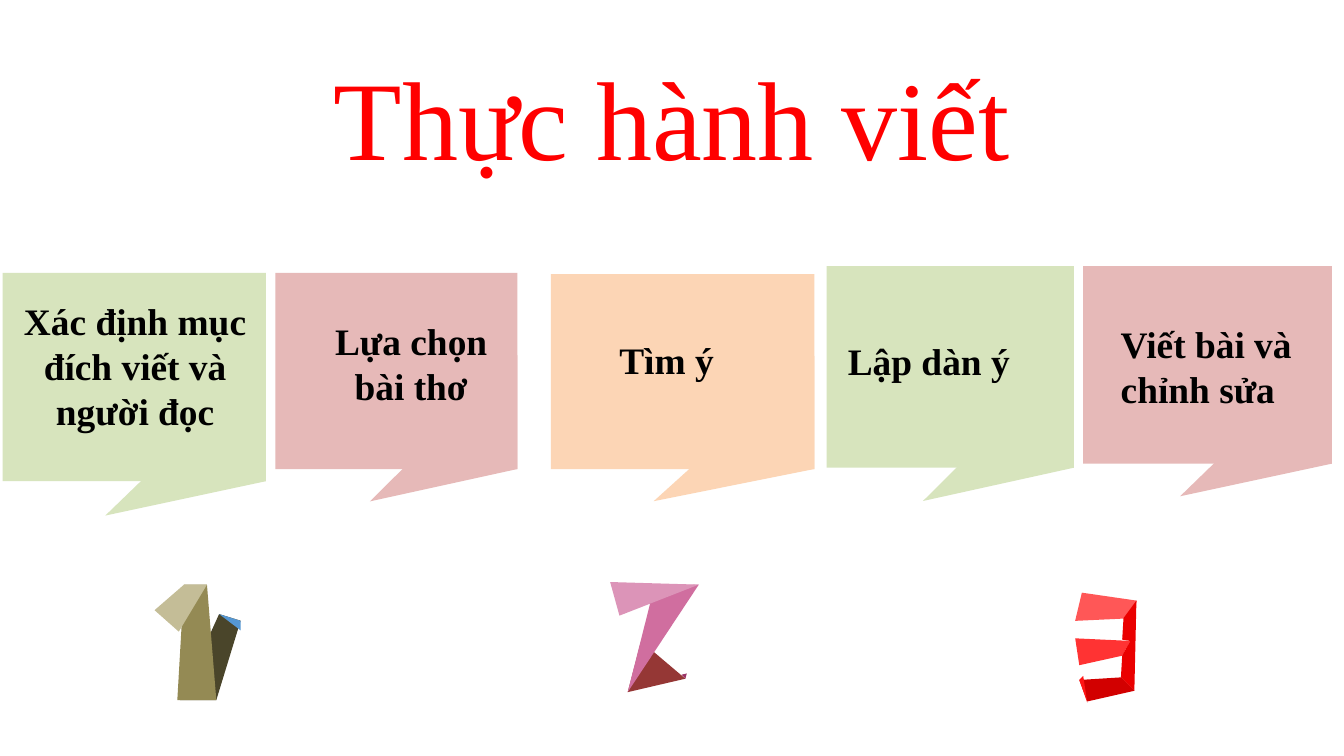
from dataclasses import dataclass

from pptx import Presentation
from pptx.dml.color import RGBColor
from pptx.enum.shapes import MSO_SHAPE as Preset
from pptx.enum.text import MSO_ANCHOR as Anchor, MSO_AUTO_SIZE as AutoSize, PP_ALIGN as Align
from pptx.util import Pt


@dataclass(frozen=True)
class Theme:
    """Fonts, type sizes and colours of the slide."""
    font: str = "Times New Roman"
    title_size: int = 60
    label_size: int = 20
    title: str = "FF0000"
    text: str = "000000"
    green: str = "D7E4BD"
    rose: str = "E6B9B8"
    peach: str = "FCD5B5"
    one: tuple = ("4A452A", "948A54", "C4BD97", "5597D3")
    two: tuple = ("953735", "D06E9F", "DC94B8", "9A3266")
    three: tuple = ("FF3333", "FF5757", "EA0000", "D20000", "FF1515")


THEME = Theme()
WIDE, TIGHT = (7.2, 3.6), (5.76, 2.88)

CALLOUTS = [
    ((1.4, 146.2, 141.1, 111.6), THEME.green),
    ((147.6, 146.2, 129.6, 105.1), THEME.rose),
    ((295.2, 146.9, 141.1, 104.4), THEME.peach),
    ((442.8, 142.6, 132.5, 108), THEME.green),
    ((580.3, 142.6, 133.2, 105.8), THEME.rose),
]
LABELS = [
    ((-8.6, 157, 162, 103), ["Xác định mục đích viết và người đọc"], Align.CENTER, TIGHT),
    ((158.4, 167.8, 123.8, 54), ["Lựa chọn bài thơ"], Align.CENTER, TIGHT),
    ((277.2, 177.8, 159.8, 30.2), ["Tìm ý"], Align.CENTER, TIGHT),
    ((447.1, 177.8, 360, 31.7), ["Lập dàn ý"], Align.LEFT, WIDE),
    ((593.3, 168.5, 111.6, 55.4), ["Viết bài và", "chỉnh sửa"], Align.LEFT, WIDE),
]
DIGITS = [
    ((82.8, 313.2), THEME.one, [
        [(13.7, 61.9), (34.6, 15.8), (46.1, 19.4), (33.1, 61.9)],
        [(15.8, 0), (28.1, 0), (33.1, 61.9), (12.2, 61.9)],
        [(0, 13.7), (15.8, 0), (28.1, 0), (13, 25.2)],
        [(46.1, 24.5), (34.6, 15.8), (46.1, 19.4)],
    ]),
    ((326.9, 311.8), THEME.two, [
        [(16.6, 31.7), (40.3, 51.8), (9.4, 59)],
        [(47.5, 1.4), (9.4, 59), (23.8, 2.2)],
        [(0, 0), (47.5, 1.4), (5, 18)],
        [(40.3, 51.8), (38.2, 49.7), (41, 49)],
    ]),
    ((576, 317.5), THEME.three, [
        [(0, 24.5), (29.5, 25.9), (25.2, 33.8), (2.2, 38.9)],
        [(3.6, 0), (33.1, 4.3), (30.2, 13.7), (0, 15.1)],
        [(32.8, 4.3), (31.7, 52.6), (24.5, 45.4), (25.2, 33.8),
         (29.5, 25.9), (25.2, 25.2), (25.9, 13.7)],
        [(2.2, 46.8), (24.5, 45.4), (31.7, 52.6), (6.5, 58.3)],
        [(2.2, 46.8), (4.3, 44.6), (6.5, 59)],
    ]),
]


def paint(shape, color):
    """Give a shape a flat fill without line or shadow."""
    shape.shadow.inherit = False
    shape.fill.solid()
    shape.fill.fore_color.rgb = RGBColor.from_string(color)
    shape.line.fill.background()


def add_facet(group, origin, points, color):
    """Draw a closed polygon whose points are relative to the origin."""
    left, top = origin
    start, *rest = [(Pt(left + x), Pt(top + y)) for x, y in points]
    builder = group.shapes.build_freeform(*start)
    builder.add_line_segments(rest, close=True)
    paint(builder.convert_to_shape(), color)


def add_callout(page, box, color):
    """Draw a speech box with a slanted tail below it."""
    left, top, width, height = box
    group = page.shapes.add_group_shape()
    tail = [(width, 0.42 * height), (0.39 * width, 1.165 * height), (width, height)]
    add_facet(group, (left, top), tail, color)
    paint(group.shapes.add_shape(Preset.RECTANGLE, *map(Pt, box)), color)


def add_digit(page, origin, colors, facets):
    """Draw a folded-paper digit from coloured facets."""
    group = page.shapes.add_group_shape()
    for color, points in zip(colors, facets):
        add_facet(group, origin, points, color)


def style_text(frame, size, color, align, bold=False):
    """Format every paragraph of a top-anchored text frame."""
    frame.word_wrap = True
    frame.auto_size = AutoSize.SHAPE_TO_FIT_TEXT
    frame.vertical_anchor = Anchor.TOP
    for para in frame.paragraphs:
        para.alignment = align
        for span in para.runs:
            span.font.name = THEME.font
            span.font.size = Pt(size)
            span.font.bold = bold
            span.font.color.rgb = RGBColor.from_string(color)


def add_title(page, box, text):
    """Place and format the title placeholder."""
    title = page.shapes.title
    title.left, title.top, title.width, title.height = map(Pt, box)
    title.text_frame.text = text
    style_text(title.text_frame, THEME.title_size, THEME.title, Align.CENTER)


def add_label(page, box, lines, align, insets):
    """Write the bold label of one step."""
    frame = page.shapes.add_textbox(*map(Pt, box)).text_frame
    frame.margin_left = frame.margin_right = Pt(insets[0])
    frame.margin_top = frame.margin_bottom = Pt(insets[1])
    frame.text = "\n".join(lines)
    style_text(frame, THEME.label_size, THEME.text, align, bold=True)


def main():
    """Build the slide and save the deck."""
    deck = Presentation()
    deck.slide_width, deck.slide_height = Pt(720), Pt(405)
    page = deck.slides.add_slide(deck.slide_layouts[5])
    add_title(page, (108, 22.3, 504, 80), "Thực hành viết")
    for callout in CALLOUTS:
        add_callout(page, *callout)
    for digit in DIGITS:
        add_digit(page, *digit)
    for label in LABELS:
        add_label(page, *label)
    deck.save("out.pptx")


if __name__ == "__main__":
    main()
